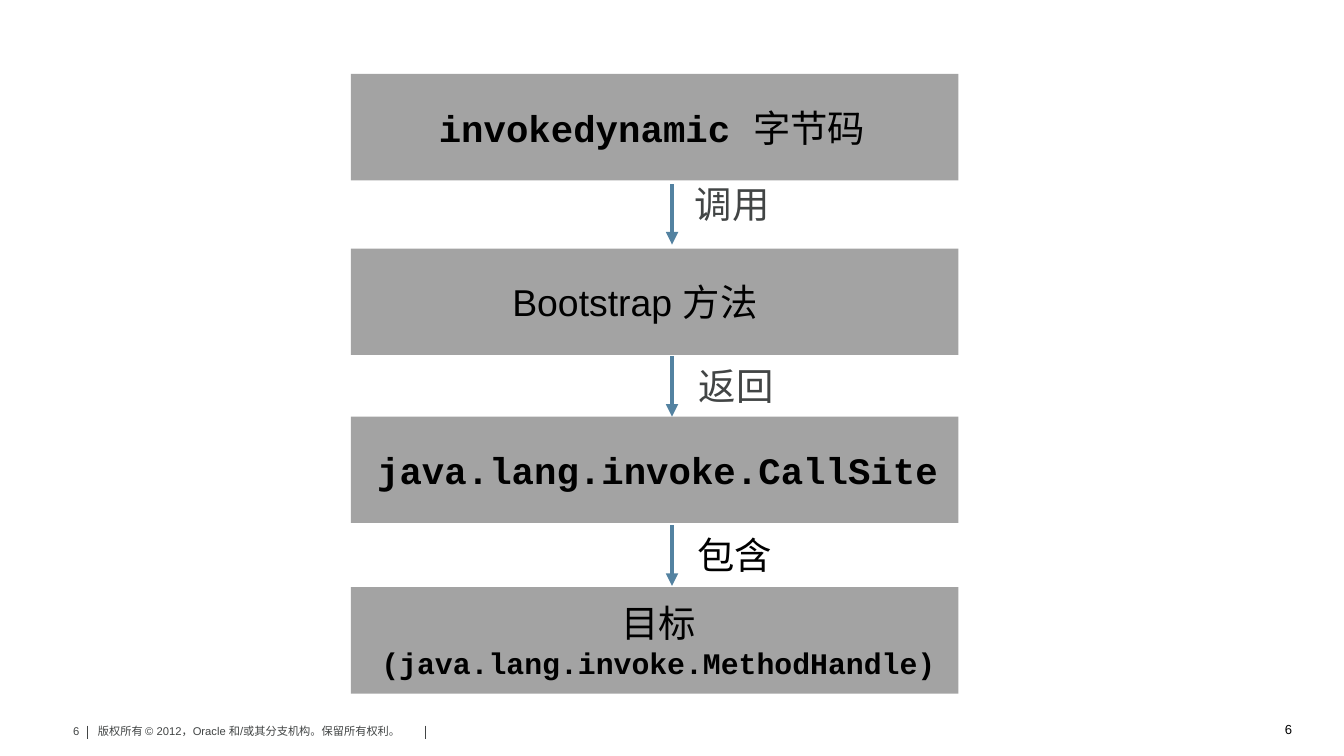
from lxml import etree
from pptx import Presentation
from pptx.dml.color import RGBColor
from pptx.enum.shapes import MSO_CONNECTOR, MSO_SHAPE
from pptx.enum.text import MSO_ANCHOR, PP_ALIGN
from pptx.oxml.ns import qn
from pptx.util import Pt

STRAIGHT = MSO_CONNECTOR.STRAIGHT
RECTANGLE = MSO_SHAPE.RECTANGLE
TOP, MIDDLE = MSO_ANCHOR.TOP, MSO_ANCHOR.MIDDLE
LEFT, CENTER, RIGHT = PP_ALIGN.LEFT, PP_ALIGN.CENTER, PP_ALIGN.RIGHT

BLACK = RGBColor(0x00, 0x00, 0x00)
DARK_GRAY = RGBColor(0x42, 0x45, 0x45)
BOX_GRAY = RGBColor(0xA3, 0xA3, 0xA3)
ARROW_BLUE = RGBColor(0x53, 0x82, 0xA1)

SANS, CODE, CHINESE = "Arial", "Courier New", "Noto Sans CJK SC"

BOX_LEFT, BOX_WIDTH, BOX_HEIGHT = 188, 325.5, 57
ARROW_LEFT, ARROW_LENGTH = 360, 32.4

# Box top, text area (left, width, height), lines of (size, spans)
STEPS = [
    (39.6, (206, 286.6, 31.5), [(20, [("invokedynamic ", CODE), ("字节码", CHINESE)])]),
    (133.2, (222.5, 235.4, 31.5), [(20, [("Bootstrap ", SANS), ("方法", CHINESE)])]),
    (223.2, (191.5, 321.8, 31.5), [(20, [("java.lang.invoke.CallSite", CODE)])]),
    (314.6, (151.2, 403.2, 51), [(20, [("目标", CHINESE)]),
                                 (16, [("(java.lang.invoke.MethodHandle)", CODE)])]),
]
# Arrow top, label, label area (left, top, width, height), colour
LINKS = [
    (98.6, "调用", (368, 95, 73.4, 41.8), DARK_GRAY),
    (190.8, "返回", (370, 192.2, 79.2, 28), DARK_GRAY),
    (281.5, "包含", (369.4, 283, 90, 28), BLACK),
]


def add_text(page, area, lines, color, align=LEFT, anchor=TOP, inset=(7.2, 3.6), wrap=True):
    """Add a text box; lines is a list of (size, [(text, font name), ...])."""
    frame = page.shapes.add_textbox(*map(Pt, area)).text_frame
    frame.word_wrap = wrap
    frame.vertical_anchor = anchor
    frame.margin_left = frame.margin_right = Pt(inset[0])
    frame.margin_top = frame.margin_bottom = Pt(inset[1])
    for index, (size, spans) in enumerate(lines):
        para = frame.add_paragraph() if index else frame.paragraphs[0]
        para.alignment = align
        para.font.size = Pt(size)
        para.font.color.rgb = color
        for text, font_name in spans:
            span = para.add_run()
            span.text = text
            span.font.name = font_name
            span.font.bold = font_name == CODE
            east_asian = etree.SubElement(span._r.get_or_add_rPr(), qn("a:ea"))
            east_asian.set("typeface", CHINESE)


def add_line(page, start, end, color, width, arrow=False):
    line = page.shapes.add_connector(STRAIGHT, *map(Pt, start + end))
    line.line.color.rgb = color
    line.line.width = Pt(width)
    if arrow:
        etree.SubElement(line.line._get_or_add_ln(), qn("a:tailEnd")).set("type", "triangle")
    etree.SubElement(line._element.spPr, qn("a:effectLst"))


def add_step(page, top, text_area, lines):
    box = page.shapes.add_shape(RECTANGLE, Pt(BOX_LEFT), Pt(top), Pt(BOX_WIDTH), Pt(BOX_HEIGHT))
    box.shadow.inherit = False
    box.fill.solid()
    box.fill.fore_color.rgb = BOX_GRAY
    box.line.fill.background()
    left, width, height = text_area
    text_top = top + (BOX_HEIGHT - height) / 2
    add_text(page, (left, text_top, width, height), lines, BLACK, CENTER, MIDDLE)


def add_link(page, top, label, area, color):
    add_line(page, (ARROW_LEFT, top), (ARROW_LEFT, top + ARROW_LENGTH), ARROW_BLUE, 2.25, True)
    add_text(page, area, [(20, [(label, CHINESE)])], color, inset=(4.3, 2.2))


def add_footer(page, left, top):
    add_text(page, (left, top, 21.6, 14.4), [(6, [("6", SANS)])], DARK_GRAY, RIGHT, wrap=False)
    copyright_line = "版权所有 © 2012，Oracle 和/或其分支机构。保留所有权利。"
    add_text(page, (left + 21.6, top + 2.2, 197.3, 17.3), [(6, [(copyright_line, SANS)])],
             DARK_GRAY, inset=(2.9, 1.4))
    for offset in (18.9, 200):
        add_line(page, (left + offset, top + 4.4), (left + offset, top + 11.6), DARK_GRAY, 0.5)
    add_text(page, (left + 656, top, 11.5, 12.2), [(7, [("6", SANS)])], BLACK, CENTER,
             inset=(4.3, 2.2), wrap=False)


def main():
    deck = Presentation()
    deck.slide_width, deck.slide_height = Pt(720), Pt(405)
    page = deck.slides.add_slide(deck.slide_layouts[6])
    add_footer(page, 28, 384.4)
    for step in STEPS:
        add_step(page, *step)
    for link in LINKS:
        add_link(page, *link)
    deck.save("out.pptx")


if __name__ == "__main__":
    main()
